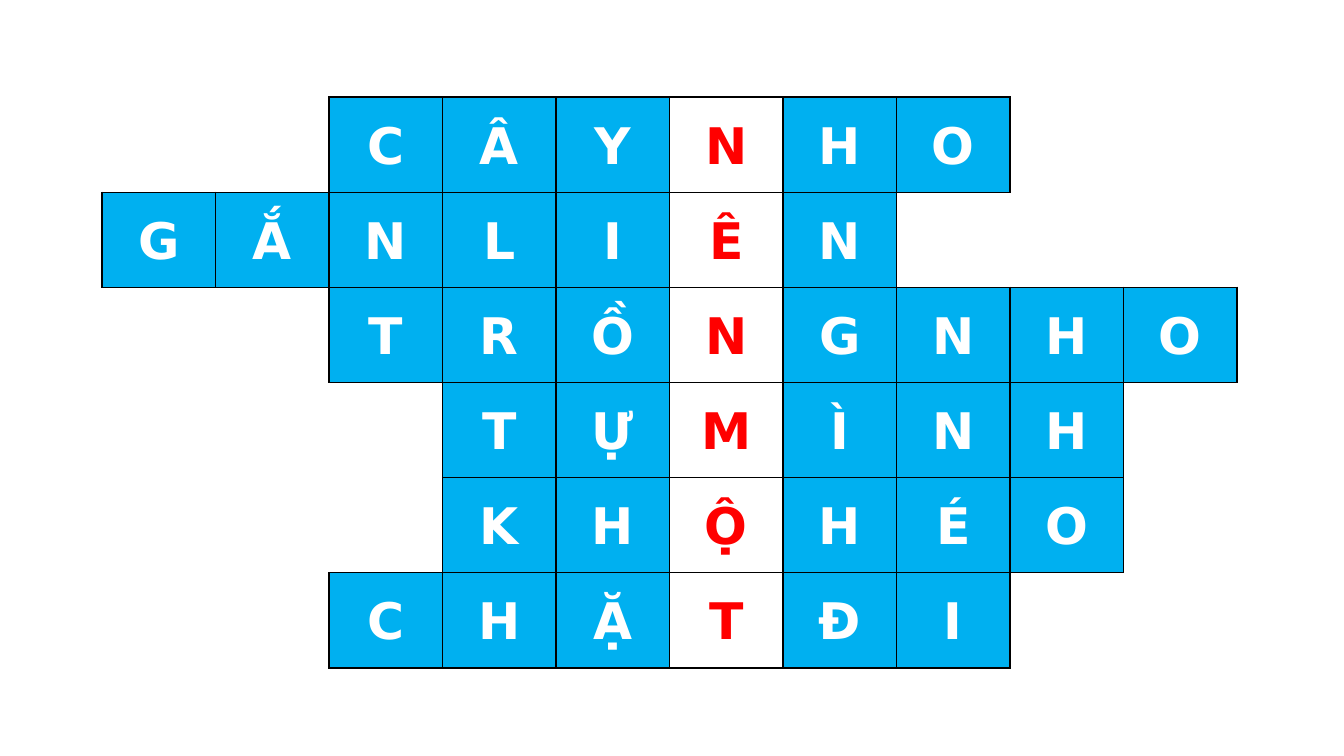
import dataclasses

import lxml.etree
import pptx
import pptx.dml.color
import pptx.enum.text
import pptx.oxml.ns
import pptx.table
import pptx.util

EMU_PER_PX = 914400 / 100.8
SLIDE_WIDTH, SLIDE_HEIGHT = 1344, 756
GRID_LEFT, GRID_TOP, GRID_WIDTH, GRID_HEIGHT = 102, 97, 1135, 571
CELL_INSET = 7
COLUMN_COUNT = 10
KEYWORD_COLUMN = 5

FONT = "DejaVu Sans"
BLACK = pptx.dml.color.RGBColor(0x00, 0x00, 0x00)
WHITE = pptx.dml.color.RGBColor(0xFF, 0xFF, 0xFF)
BLUE = pptx.dml.color.RGBColor(0x00, 0xB0, 0xF0)
RED = pptx.dml.color.RGBColor(0xFF, 0x00, 0x00)


@dataclasses.dataclass(frozen=True)
class Answer:
    first_column: int
    letters: str

    def letter_at(self, column: int) -> str:
        offset = column - self.first_column
        return self.letters[offset] if 0 <= offset < len(self.letters) else ""


ANSWERS = [
    Answer(2, "CÂYNHO"),
    Answer(0, "GẮNLIÊN"),
    Answer(2, "TRỒNGNHO"),
    Answer(3, "TỰMÌNH"),
    Answer(3, "KHỘHÉO"),
    Answer(2, "CHẶTĐI"),
]

# Border tag and the (row, column) step to the neighbour across it
SIDES = {"a:lnL": (0, -1), "a:lnR": (0, 1), "a:lnT": (-1, 0), "a:lnB": (1, 0)}


def px(length: int) -> pptx.util.Emu:
    return pptx.util.Emu(round(length * EMU_PER_PX))


def letter_in(row: int, column: int) -> str:
    return ANSWERS[row].letter_at(column) if 0 <= row < len(ANSWERS) else ""


def draw_borders(cell: pptx.table._Cell, row: int, column: int) -> None:
    """Rule each side that touches a letter, and hide the other sides."""
    properties = cell._tc.get_or_add_tcPr()
    for tag, (row_step, column_step) in SIDES.items():
        line = lxml.etree.SubElement(properties, pptx.oxml.ns.qn(tag), w=str(pptx.util.Pt(1)))
        if letter_in(row, column) or letter_in(row + row_step, column + column_step):
            fill = lxml.etree.SubElement(line, pptx.oxml.ns.qn("a:solidFill"))
            lxml.etree.SubElement(fill, pptx.oxml.ns.qn("a:srgbClr"), val=str(BLACK))
        else:
            lxml.etree.SubElement(line, pptx.oxml.ns.qn("a:noFill"))


def write_letter(cell: pptx.table._Cell, letter: str, in_keyword: bool) -> None:
    cell.fill.solid()
    cell.fill.fore_color.rgb = WHITE if in_keyword else BLUE
    cell.vertical_anchor = pptx.enum.text.MSO_ANCHOR.MIDDLE
    cell.margin_left = cell.margin_right = px(CELL_INSET)
    cell.margin_top = cell.margin_bottom = 0
    paragraph = cell.text_frame.paragraphs[0]
    paragraph.alignment = pptx.enum.text.PP_ALIGN.CENTER
    paragraph.line_spacing = 1.07
    paragraph.space_after = pptx.util.Pt(8)
    run = paragraph.add_run()
    run.text = letter
    run.font.name = FONT
    run.font.size = pptx.util.Pt(36)
    run.font.bold = True
    run.font.color.rgb = RED if in_keyword else WHITE


def main() -> None:
    presentation = pptx.Presentation()
    presentation.slide_width = px(SLIDE_WIDTH)
    presentation.slide_height = px(SLIDE_HEIGHT)
    slide = presentation.slides.add_slide(presentation.slide_layouts[6])

    crossword = slide.shapes.add_table(
        len(ANSWERS), COLUMN_COUNT,
        px(GRID_LEFT), px(GRID_TOP), px(GRID_WIDTH), px(GRID_HEIGHT),
    ).table
    crossword.first_row = False
    crossword.horz_banding = False

    for row in range(len(ANSWERS)):
        for column in range(COLUMN_COUNT):
            cell = crossword.cell(row, column)
            draw_borders(cell, row, column)
            letter = letter_in(row, column)
            if letter:
                write_letter(cell, letter, column == KEYWORD_COLUMN)
            else:
                cell.fill.background()

    presentation.save("out.pptx")


if __name__ == "__main__":
    main()
